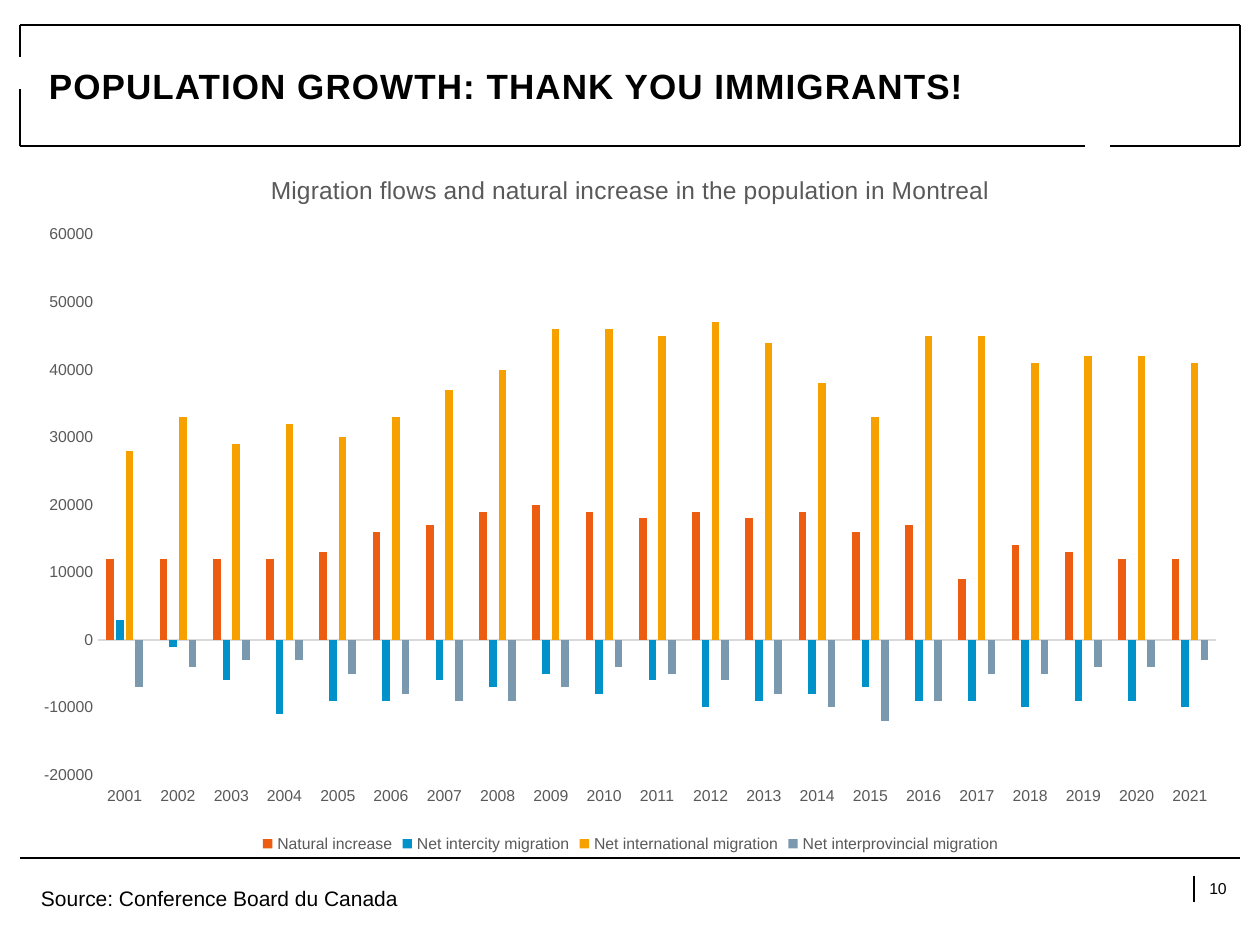
from lxml import etree
from pptx import Presentation
from pptx.chart.data import CategoryChartData
from pptx.dml.color import RGBColor
from pptx.enum.chart import XL_CHART_TYPE, XL_LEGEND_POSITION, XL_TICK_LABEL_POSITION, XL_TICK_MARK
from pptx.enum.shapes import MSO_CONNECTOR
from pptx.enum.text import MSO_ANCHOR, PP_ALIGN
from pptx.oxml import parse_xml
from pptx.oxml.ns import nsdecls, qn
from pptx.util import Emu, Pt

COLUMNS = XL_CHART_TYPE.COLUMN_CLUSTERED
BOTTOM = XL_LEGEND_POSITION.BOTTOM
LOW = XL_TICK_LABEL_POSITION.LOW
NO_TICK = XL_TICK_MARK.NONE
STRAIGHT = MSO_CONNECTOR.STRAIGHT
MIDDLE, TOP = MSO_ANCHOR.MIDDLE, MSO_ANCHOR.TOP
LEFT, CENTER = PP_ALIGN.LEFT, PP_ALIGN.CENTER

FONT = "Arial"
BLACK = RGBColor(0x00, 0x00, 0x00)
GRAY = RGBColor(0x59, 0x59, 0x59)
LIGHT_GRAY = RGBColor(0xD9, 0xD9, 0xD9)
ORANGE = RGBColor(0xEC, 0x5C, 0x11)
BLUE = RGBColor(0x00, 0x92, 0xC8)
AMBER = RGBColor(0xF6, 0xA1, 0x00)
SLATE = RGBColor(0x7B, 0x99, 0xAE)
SCALE = 914400 / 126  # EMU in one px


def px(*lengths):
    return [Emu(round(length * SCALE)) for length in lengths]


def add_text(box, text, size, anchor, align, margins):
    frame = slide.shapes.add_textbox(*px(*box)).text_frame
    frame.word_wrap = True
    frame.vertical_anchor = anchor
    frame.margin_left, frame.margin_top = px(*margins)
    frame.margin_right, frame.margin_bottom = px(*margins)
    frame.text = text
    paragraph = frame.paragraphs[0]
    paragraph.alignment = align
    font = paragraph.runs[0].font
    font.name, font.size = FONT, Pt(size)
    font.color.rgb = BLACK
    return font


presentation = Presentation()
presentation.slide_width, presentation.slide_height = px(1260, 945)
slide = presentation.slides.add_slide(presentation.slide_layouts[6])

# Broken title frame, footer rule and page number bar
lines = [
    (1240, 858, 20, 858),
    (1194, 876, 1194, 902),
    (20, 146, 1085, 146),
    (20, 25, 1240, 25),
    (20, 25, 20, 57),
    (20, 89, 20, 146),
    (1240, 146, 1240, 25),
    (1110, 146, 1240, 146),
]
for ends in lines:
    connector = slide.shapes.add_connector(STRAIGHT, *px(*ends))
    connector.line.color.rgb = BLACK
    connector.line.width = Pt(0.75)
    etree.SubElement(connector._element.spPr, qn("a:effectLst"))

# Title and page number
title_font = add_text((20, 25, 1221, 120), "POPULATION GROWTH: THANK YOU IMMIGRANTS!",
                      20, MIDDLE, LEFT, (29, 11))
title_font.bold = True
title_font._element.set("spc", "60")
add_text((1196, 859, 44, 59), "10", 9, MIDDLE, CENTER, (6, 6))

# Chart data, in thousands of people
series_data = [
    ("Natural increase", ORANGE,
     [12, 12, 12, 12, 13, 16, 17, 19, 20, 19, 18, 19, 18, 19, 16, 17, 9, 14, 13, 12, 12]),
    ("Net intercity migration", BLUE,
     [3, -1, -6, -11, -9, -9, -6, -7, -5, -8, -6, -10, -9, -8, -7, -9, -9, -10, -9, -9, -10]),
    ("Net international migration", AMBER,
     [28, 33, 29, 32, 30, 33, 37, 40, 46, 46, 45, 47, 44, 38, 33, 45, 45, 41, 42, 42, 41]),
    ("Net interprovincial migration", SLATE,
     [-7, -4, -3, -3, -5, -8, -9, -9, -7, -4, -5, -6, -8, -10, -12, -9, -5, -5, -4, -4, -3]),
]
chart_data = CategoryChartData(number_format="General")
chart_data.categories = [str(year) for year in range(2001, 2022)]
for name, color, thousands in series_data:
    chart_data.add_series(name, [value * 1000 for value in thousands])
chart = slide.shapes.add_chart(COLUMNS, *px(20, 149, 1221, 709), chart_data).chart
chart.font.name, chart.font.size = FONT, Pt(10)
chart.font.color.rgb = BLACK

# Columns
plot = chart.plots[0]
plot.gap_width, plot.overlap = 219, -27
plot.vary_by_categories = False
for series, (name, color, thousands) in zip(plot.series, series_data):
    series.invert_if_negative = False
    series.format.fill.solid()
    series.format.fill.fore_color.rgb = color

# Chart title and legend
chart.has_title = True
chart.chart_title.include_in_layout = False
chart_title = chart.chart_title.text_frame
chart_title.text = "Migration flows and natural increase in the population in Montreal"
chart_title_font = chart_title.paragraphs[0].runs[0].font
chart_title_font.size, chart_title_font.bold = Pt(14), False
chart.has_legend = True
chart.legend.position = BOTTOM
chart.legend.include_in_layout = False
chart.legend.font.size = Pt(9)

# Axes
category_axis, value_axis = chart.category_axis, chart.value_axis
for axis in (category_axis, value_axis):
    axis.major_tick_mark = axis.minor_tick_mark = NO_TICK
    axis.has_major_gridlines = False
    axis.tick_labels.font.size = Pt(9)
for font in (chart_title_font, chart.legend.font,
             category_axis.tick_labels.font, value_axis.tick_labels.font):
    font.name = FONT
    font.color.rgb = GRAY
category_axis.tick_label_position = LOW
category_axis.format.line.color.rgb = LIGHT_GRAY
category_axis.format.line.width = Pt(0.75)
value_axis.format.line.fill.background()
value_axis.minimum_scale, value_axis.maximum_scale = -20000, 60000
value_axis.major_unit = 10000
value_axis.tick_labels.number_format = "General"
value_axis.tick_labels.number_format_is_linked = False

# Plot area inside the chart, as fractions of its size
plot_area = chart._chartSpace.chart.plotArea
for old_layout in plot_area.findall(qn("c:layout")):
    plot_area.remove(old_layout)
settings = [("layoutTarget", "inner"), ("xMode", "edge"), ("yMode", "edge"),
            ("x", 0.064), ("y", 0.121), ("w", 0.916), ("h", 0.762)]
layout = "".join(f'<c:{tag} val="{value}"/>' for tag, value in settings)
plot_area.insert(0, parse_xml(
    f'<c:layout {nsdecls("c")}><c:manualLayout>{layout}</c:manualLayout></c:layout>'))

# Source
add_text((29, 880, 683, 38), "Source: Conference Board du Canada", 12, TOP, LEFT, (12, 6))

presentation.save("out.pptx")
